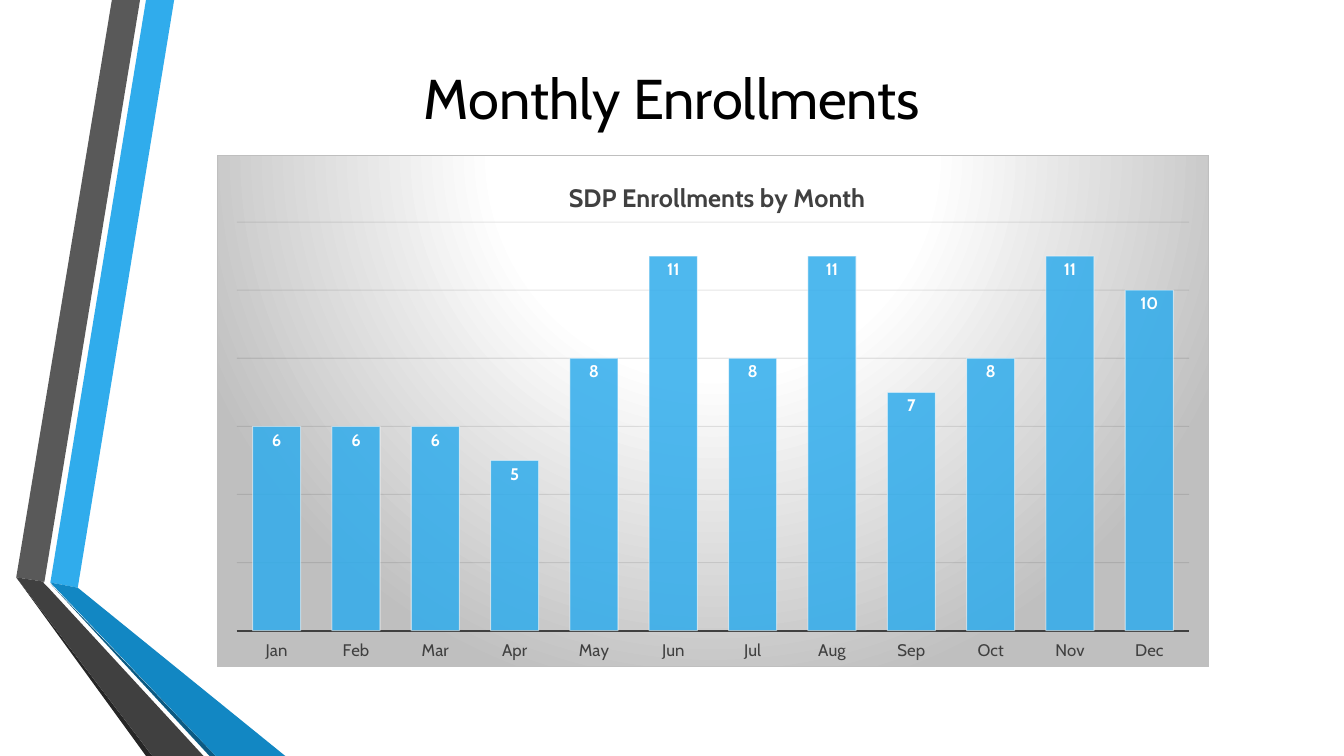
from lxml import etree
from pptx import Presentation
from pptx.chart.data import CategoryChartData
from pptx.dml.color import RGBColor
from pptx.enum.chart import XL_CHART_TYPE, XL_LABEL_POSITION, XL_TICK_LABEL_POSITION, XL_TICK_MARK
from pptx.enum.text import MSO_ANCHOR, PP_ALIGN
from pptx.oxml import parse_xml
from pptx.oxml.ns import nsdecls, qn
from pptx.util import Cm, Pt

COLUMN = XL_CHART_TYPE.COLUMN_CLUSTERED
INSIDE_END = XL_LABEL_POSITION.INSIDE_END
LOW = XL_TICK_LABEL_POSITION.LOW
NO_TICK = XL_TICK_MARK.NONE
MIDDLE = MSO_ANCHOR.MIDDLE
CENTER = PP_ALIGN.CENTER

FONT = "Cabin"
BLACK = RGBColor(0x00, 0x00, 0x00)
WHITE = RGBColor(0xFF, 0xFF, 0xFF)
BLUE = RGBColor(0x30, 0xAC, 0xEC)
DEEP_BLUE = RGBColor(0x12, 0x87, 0xC3)
NAVY = RGBColor(0x0C, 0x5A, 0x82)
GREY = RGBColor(0x59, 0x59, 0x59)
CHARCOAL = RGBColor(0x40, 0x40, 0x40)
DARK = RGBColor(0x26, 0x26, 0x26)
SILVER = RGBColor(0xBF, 0xBF, 0xBF)
GRID = RGBColor(0x0D, 0x0D, 0x0D)

WIDTH, HEIGHT = 33.87, 19.05
RIBBONS = [
    (BLUE, [(1.27, 14.68), (1.96, 14.81), (4.39, 0), (3.68, 0)]),
    (GREY, [(3.53, 0), (2.82, 0), (0.41, 14.55), (1.12, 14.66)]),
    (DARK, [(0.41, 14.55), (3.68, HEIGHT), (3.84, HEIGHT)]),
    (NAVY, [(1.27, 14.71), (5.28, HEIGHT), (5.44, HEIGHT)]),
    (DEEP_BLUE, [(1.27, 14.68), (5.44, HEIGHT), (7.19, HEIGHT), (1.96, 14.81)]),
    (CHARCOAL, [(5.13, HEIGHT), (1.22, 14.81), (1.09, 14.68), (1.12, 14.66),
                (0.41, 14.55), (3.84, HEIGHT)]),
]
ENROLLMENTS = {"Jan": 6, "Feb": 6, "Mar": 6, "Apr": 5, "May": 8, "Jun": 11,
               "Jul": 8, "Aug": 11, "Sep": 7, "Oct": 8, "Nov": 11, "Dec": 10}


def style_font(font, size, color, bold=False):
    """Set typeface, size, colour and weight of a font."""
    font.name, font.size, font.bold = FONT, Pt(size), bold
    font.color.rgb = color


def style_line(line, color, width):
    """Give a line a solid colour and a width in points."""
    line.fill.solid()
    line.fill.fore_color.rgb = color
    line.width = Pt(width)


def set_alpha(chart, query, percent):
    """Make the colours found by an XPath query partly opaque."""
    for color in chart.element.xpath(query):
        etree.SubElement(color, qn("a:alpha"), val=str(percent * 1000))


def place_part(part, index, **fractions):
    """Place a chart part by fractions of the chart area."""
    for old in part.findall(qn("c:layout")):
        part.remove(old)
    layout = parse_xml(f"<c:layout {nsdecls('c')}/>")
    manual = etree.SubElement(layout, qn("c:manualLayout"))
    if "w" in fractions:
        etree.SubElement(manual, qn("c:layoutTarget"), val="inner")
    for axis in "xy":
        etree.SubElement(manual, qn(f"c:{axis}Mode"), val="edge")
    for name, value in fractions.items():
        etree.SubElement(manual, qn(f"c:{name}"), val=str(value))
    part.insert(index, layout)


def add_ribbon(page, color, points):
    """Draw one filled ribbon segment through points in centimetres."""
    corners = [(Cm(x), Cm(y)) for x, y in points]
    builder = page.shapes.build_freeform(*corners[0])
    builder.add_line_segments(corners[1:], close=True)
    ribbon = builder.convert_to_shape()
    ribbon.shadow.inherit = False
    ribbon.fill.solid()
    ribbon.fill.fore_color.rgb = color
    ribbon.line.fill.background()


def write_title(page, text):
    """Place and format the slide title."""
    title = page.shapes.title
    title.left, title.top, title.width, title.height = Cm(2.34), Cm(0.94), Cm(29.18), Cm(3)
    title.text_frame.vertical_anchor = MIDDLE
    para = title.text_frame.paragraphs[0]
    para.alignment = CENTER
    span = para.add_run()
    span.text = text
    style_font(span.font, 40, BLACK)


def fill_chart_area(chart):
    """Give the chart area a radial gradient and a thin border."""
    stops = "".join(
        f'<a:gs pos="{position * 1000}"><a:srgbClr val="{color}"/></a:gs>'
        for position, color in [(0, WHITE), (39, WHITE), (100, SILVER)])
    area = parse_xml(
        f"<c:spPr {nsdecls('c', 'a')}><a:gradFill><a:gsLst>{stops}</a:gsLst>"
        '<a:path path="circle"><a:fillToRect l="50000" t="-80000" r="50000" b="180000"/>'
        '</a:path></a:gradFill><a:ln w="9525"><a:solidFill>'
        f'<a:srgbClr val="{SILVER}"/></a:solidFill></a:ln></c:spPr>')
    chart.element.find(qn("c:chart")).addnext(area)


def write_chart_title(chart, text):
    """Write the chart title near the top of the chart area."""
    chart.has_title = True
    span = chart.chart_title.text_frame.paragraphs[0].add_run()
    span.text = text
    style_font(span.font, 18, CHARCOAL, bold=True)
    place_part(chart.element.xpath("c:chart/c:title")[0], 1, x=0.35, y=0.04)


def format_axes(chart):
    """Show month labels and gridlines, and hide the value axis."""
    months = chart.category_axis
    months.major_tick_mark = months.minor_tick_mark = NO_TICK
    months.tick_label_position = LOW
    months.has_major_gridlines = False
    style_font(months.tick_labels.font, 12, CHARCOAL)
    style_line(months.format.line, CHARCOAL, 1.5)
    counts = chart.value_axis
    counts.minimum_scale, counts.maximum_scale, counts.major_unit = 0, 12, 2
    counts.visible = False
    counts.has_major_gridlines = True
    style_line(counts.major_gridlines.format.line, GRID, 0.75)
    set_alpha(chart, "//c:majorGridlines//a:srgbClr", 10)


def format_columns(chart):
    """Colour the columns and label each with its value."""
    plot = chart.plots[0]
    plot.gap_width = 65
    plot.vary_by_categories = False
    series = plot.series[0]
    series.invert_if_negative = False
    series.format.fill.solid()
    series.format.fill.fore_color.rgb = BLUE
    style_line(series.format.line, WHITE, 0.75)
    set_alpha(chart, "//c:ser/c:spPr/a:solidFill/a:srgbClr", 85)
    set_alpha(chart, "//c:ser/c:spPr/a:ln//a:srgbClr", 50)
    labels = series.data_labels
    labels.show_value = True
    labels.position = INSIDE_END
    style_font(labels.font, 12, WHITE, bold=True)


def add_enrollment_chart(page):
    """Add the column chart of enrollments by month."""
    data = CategoryChartData()
    data.categories = list(ENROLLMENTS)
    data.add_series("Series 1", list(ENROLLMENTS.values()))
    frame = page.shapes.add_chart(COLUMN, Cm(5.46), Cm(3.91), Cm(25.02), Cm(12.9), data)
    chart = frame.chart
    chart.has_legend = False
    style_font(chart.font, 10, BLACK)
    fill_chart_area(chart)
    write_chart_title(chart, "SDP Enrollments by Month")
    format_axes(chart)
    format_columns(chart)
    place_part(chart.element.xpath("c:chart/c:plotArea")[0], 0, x=0.02, y=0.13, w=0.96, h=0.8)


def main():
    """Build the enrollment slide and save it."""
    deck = Presentation()
    deck.slide_width, deck.slide_height = Cm(WIDTH), Cm(HEIGHT)
    page = deck.slides.add_slide(deck.slide_layouts.get_by_name("Title Only"))
    for color, points in RIBBONS:
        add_ribbon(page, color, points)
    write_title(page, "Monthly Enrollments")
    add_enrollment_chart(page)
    deck.save("out.pptx")


if __name__ == "__main__":
    main()
